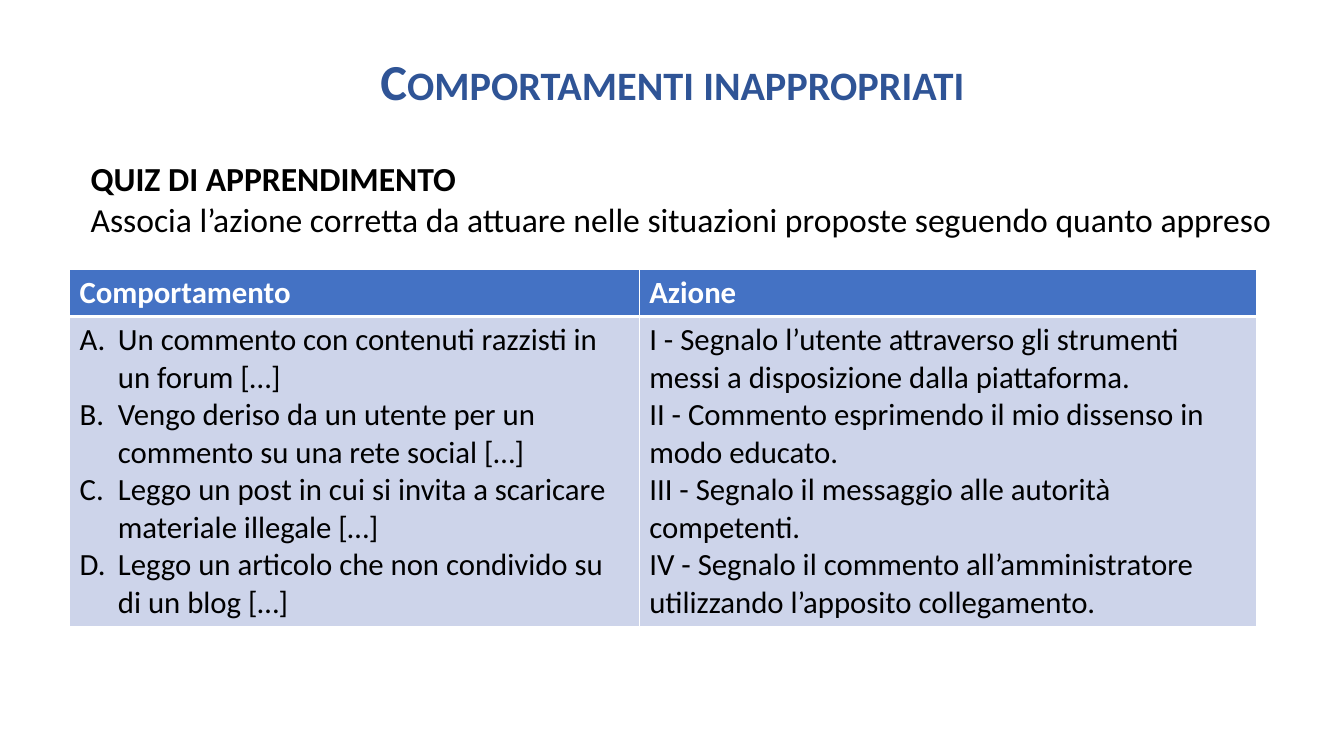
from lxml import etree
from pptx import Presentation
from pptx.dml.color import RGBColor
from pptx.enum.text import MSO_ANCHOR as Anchor, PP_ALIGN as Align
from pptx.oxml.ns import qn
from pptx.util import Inches, Pt

TITLE = "Comportamenti inappropriati"
INTRO = [
    ("QUIZ DI APPRENDIMENTO", True),
    ("Associa l’azione corretta da attuare nelle situazioni proposte seguendo quanto appreso", False),
]
HEADERS = ["Comportamento", "Azione"]
BEHAVIOURS = [
    "Un commento con contenuti razzisti in un forum […]",
    "Vengo deriso da un utente per un commento su una rete social […]",
    "Leggo un post in cui si invita a scaricare materiale illegale […]",
    "Leggo un articolo che non condivido su di un blog […]",
]
ACTIONS = [
    "I - Segnalo l’utente attraverso gli strumenti messi a disposizione dalla piattaforma.",
    "II - Commento esprimendo il mio dissenso in modo educato.",
    "III - Segnalo il messaggio alle autorità competenti.",
    "IV - Segnalo il commento all’amministratore utilizzando l’apposito collegamento.",
]
THEME = {
    "font": "Calibri",
    "title": ("2F5496", 36),
    "intro": ("000000", 24),
    "header": ("FFFFFF", 22),
    "body": ("000000", 22),
    "header_fill": "4472C4",
    "body_fill": "CDD4EA",
    "border": "FFFFFF",
}
COLUMN_WIDTHS = [5.65, 6.12]
ROW_HEIGHTS = [0.47, 3.08]
TABLE_LEFT, TABLE_TOP = 0.69, 2.67
NUMBER_INDENT = 0.38
THIN, THICK = 1, 3


def add_text(para, text, role, bold):
    color, size = THEME[role]
    span = para.add_run()
    span.text = text
    for name, value in {"name": THEME["font"], "size": Pt(size), "bold": bold}.items():
        setattr(span.font, name, value)
    span.font.color.rgb = RGBColor.from_string(color)
    return span


def fill_frame(frame, lines, role):
    paras = []
    for index, (text, bold) in enumerate(lines):
        para = frame.add_paragraph() if index else frame.paragraphs[0]
        add_text(para, text, role, bold)
        paras.append(para)
    return paras


def add_box(slide, left, top, width, height, insets):
    box = slide.shapes.add_textbox(*map(Inches, (left, top, width, height)))
    frame = box.text_frame
    frame.word_wrap = True
    frame.vertical_anchor = Anchor.TOP
    for side, inset in zip(("left", "top", "right", "bottom"), insets):
        setattr(frame, f"margin_{side}", Inches(inset))
    return frame


def number_paragraph(para):
    props = para._p.get_or_add_pPr()
    props.set("marL", str(Inches(NUMBER_INDENT)))
    props.set("indent", str(-Inches(NUMBER_INDENT)))
    etree.SubElement(props, qn("a:buFont"), typeface="+mj-lt")
    etree.SubElement(props, qn("a:buAutoNum"), type="alphaUcPeriod")


def style_cell(cell, fill, top, bottom):
    cell.fill.solid()
    cell.fill.fore_color.rgb = RGBColor.from_string(fill)
    props = cell._tc.get_or_add_tcPr()
    widths = {"lnL": THIN, "lnR": THIN, "lnT": top, "lnB": bottom}
    for position, (tag, width) in enumerate(widths.items()):
        line = etree.Element(qn(f"a:{tag}"), w=str(Pt(width)))
        solid = etree.SubElement(line, qn("a:solidFill"))
        etree.SubElement(solid, qn("a:srgbClr"), val=THEME["border"])
        props.insert(position, line)


def add_quiz_table(slide):
    size = sum(COLUMN_WIDTHS), sum(ROW_HEIGHTS)
    table = slide.shapes.add_table(
        len(ROW_HEIGHTS), len(COLUMN_WIDTHS), *map(Inches, (TABLE_LEFT, TABLE_TOP, *size))
    ).table
    for column, width in zip(table.columns, COLUMN_WIDTHS):
        column.width = Inches(width)
    for row, height in zip(table.rows, ROW_HEIGHTS):
        row.height = Inches(height)
    for index, (header, entries) in enumerate(zip(HEADERS, (BEHAVIOURS, ACTIONS))):
        head, body = table.cell(0, index), table.cell(1, index)
        style_cell(head, THEME["header_fill"], THIN, THICK)
        style_cell(body, THEME["body_fill"], THICK, THIN)
        fill_frame(head.text_frame, [(header, True)], "header")
        paras = fill_frame(body.text_frame, [(entry, False) for entry in entries], "body")
        if entries is BEHAVIOURS:
            for para in paras:
                number_paragraph(para)


def main():
    deck = Presentation()
    deck.slide_width, deck.slide_height = Inches(13.33), Inches(7.5)
    slide = deck.slides.add_slide(deck.slide_layouts[6])

    frame = add_box(slide, 0.92, 0.4, 11.5, 1.45, (0.13, 0.17, 0.13, 0.07))
    para = frame.paragraphs[0]
    for name, value in {"alignment": Align.CENTER, "line_spacing": 0.9}.items():
        setattr(para, name, value)
    span = add_text(para, TITLE, "title", True)
    span._r.get_or_add_rPr().set("cap", "small")

    add_quiz_table(slide)
    fill_frame(add_box(slide, 0.8, 1.52, 12.11, 1.21, (0.1, 0.05, 0.1, 0.05)), INTRO, "intro")
    deck.save("out.pptx")


if __name__ == "__main__":
    main()
